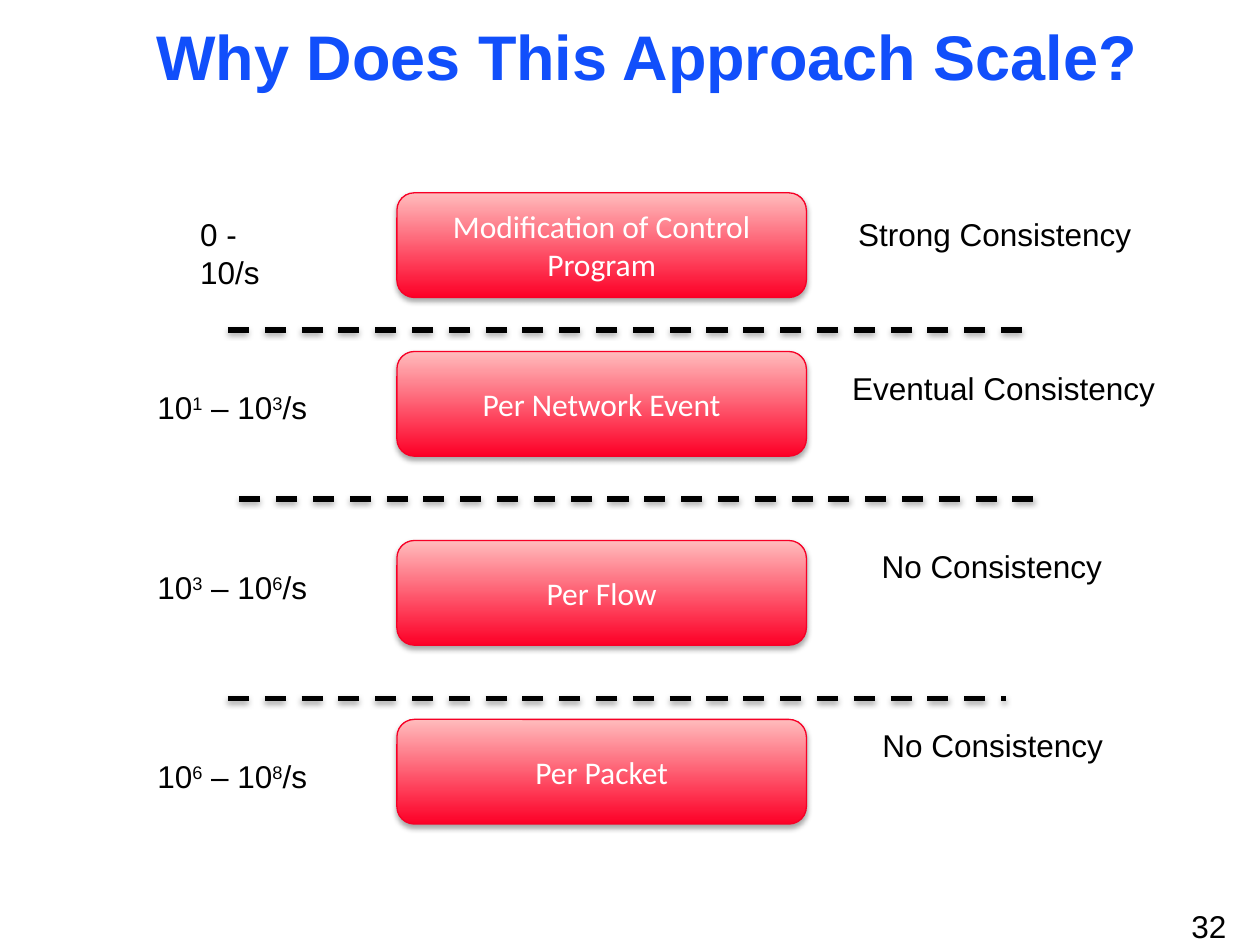
import dataclasses

import pptx
import pptx.dml.color
import pptx.enum.dml
import pptx.enum.shapes
import pptx.enum.text
import pptx.oxml
import pptx.oxml.ns
import pptx.util

Pt = pptx.util.Pt
RGB = pptx.dml.color.RGBColor.from_string
ALIGN = pptx.enum.text.PP_ALIGN
ANCHOR = pptx.enum.text.MSO_ANCHOR


@dataclasses.dataclass(frozen=True)
class Theme:
    """Colours, fonts and type sizes of the slide."""
    title: str = "114FFB"
    ink: str = "000000"
    light: str = "FFFFFF"
    red: str = "FD0027"
    pink: str = "FFBBBC"
    edge: str = "F70026"
    font: str = "Arial"
    box_font: str = "Calibri"
    title_size: float = 36
    body_size: float = 18


THEME = Theme()


def assign(obj, values):
    """Set each attribute named in values."""
    for name, value in values.items():
        setattr(obj, name, value)


def add_shadow(sp, alpha, dist):
    """Give a shape or connector a soft shadow falling straight down."""
    xml = (
        f'<a:effectLst {pptx.oxml.ns.nsdecls("a")}>'
        f'<a:outerShdw blurRad="{Pt(3.15)}" dist="{Pt(dist)}" dir="5400000" rotWithShape="0">'
        f'<a:srgbClr val="{THEME.ink}"><a:alpha val="{alpha * 1000}"/></a:srgbClr>'
        '</a:outerShdw></a:effectLst>'
    )
    for old in sp._element.spPr.findall(pptx.oxml.ns.qn("a:effectLst")):
        sp._element.spPr.remove(old)
    sp._element.spPr.append(pptx.oxml.parse_xml(xml))


def write(sp, text, align=ALIGN.LEFT, color=THEME.ink, frame=None, **font):
    """Write text in one paragraph, raising every second part split by ^."""
    tf = sp.text_frame
    assign(tf, {"word_wrap": True, "vertical_anchor": ANCHOR.TOP, **(frame or {})})
    p = tf.paragraphs[0]
    p.alignment = align
    for i, part in enumerate(text.split("^")):
        r = p.add_run()
        r.text = part
        assign(r.font, {"name": THEME.font, "size": Pt(THEME.body_size), **font})
        r.font.color.rgb = RGB(color)
        if i % 2:
            r._r.get_or_add_rPr().set("baseline", "30000")
    return p


def add_text(s, box, text, **style):
    """Place a text box and write in it."""
    return write(s.shapes.add_textbox(*map(Pt, box)), text, **style)


def add_title(s, box, text):
    """Place the slide title in the box."""
    p = add_text(s, box, text, align=ALIGN.CENTER, color=THEME.title,
                 frame={"vertical_anchor": ANCHOR.MIDDLE},
                 size=Pt(THEME.title_size), bold=True)
    p.line_spacing = 0.9


def add_event(s, box, text):
    """Place a red rounded event box."""
    sp = s.shapes.add_shape(pptx.enum.shapes.MSO_SHAPE.ROUNDED_RECTANGLE, *map(Pt, box))
    sp.fill.gradient()
    sp.fill.gradient_angle = 90
    for stop, position, color in zip(sp.fill.gradient_stops, (0, 1), (THEME.red, THEME.pink)):
        stop.position = position
        stop.color.rgb = RGB(color)
    sp.line.color.rgb = RGB(THEME.edge)
    sp.line.width = Pt(0.75)
    add_shadow(sp, 35, 1.8)
    write(sp, text, align=ALIGN.CENTER, color=THEME.light,
          frame={"vertical_anchor": ANCHOR.MIDDLE}, name=THEME.box_font)


def add_level(s, box, rate, event, consistency):
    """Place a row: rate, event box and consistency, each as text and offsets."""
    left, top, width, height = box
    rate_text, rate_x, rate_y, rate_width = rate
    label, center, label_y = consistency
    add_text(s, (left + rate_x, top + rate_y, rate_width, 29), rate_text)
    add_event(s, (left + 144, top, 234, height), event)
    label_width = 2 * (width - center)
    add_text(s, (left + center - label_width / 2, top + label_y, label_width, 29),
             label, align=ALIGN.CENTER, frame={"word_wrap": False})


def add_divider(s, left, right, y):
    """Draw a dashed line between two levels."""
    line = s.shapes.add_connector(pptx.enum.shapes.MSO_CONNECTOR.STRAIGHT,
                                  *map(Pt, (left, y, right, y)))
    line.line.color.rgb = RGB(THEME.ink)
    assign(line.line, {"width": Pt(3), "dash_style": pptx.enum.dml.MSO_LINE.DASH})
    add_shadow(line, 38, 1.57)


LEVELS = [
    (110.2, ("0 - 10/s", 24.5, 9.3, 70), "Modification of Control Program",
     ("Strong Consistency", 485.6, 9.3)),
    (200.9, ("10^1^ – 10^3^/s", 0, 17.3, 132.5), "Per Network Event",
     ("Eventual Consistency", 490.7, 6.5)),
    (308.9, ("10^3^ – 10^6^/s", 0, 12.2, 132.5), "Per Flow",
     ("No Consistency", 484, 0)),
    (411.1, ("10^6^ – 10^8^/s", 0, 18, 132.5), "Per Packet",
     ("No Consistency", 484.5, 0)),
]
DIVIDERS = [(130.3, 586.8, 188.6), (136.8, 592.6, 285.1), (130.3, 574.6, 399.2)]


def main():
    """Build the slide and save it."""
    prs = pptx.Presentation()
    assign(prs, {"slide_width": Pt(720), "slide_height": Pt(540)})
    s = prs.slides.add_slide(prs.slide_layouts[6])
    add_title(s, (19.4, 12.2, 700.6, 44.6), "Why Does This Approach Scale?")
    for top, rate, event, consistency in LEVELS:
        add_level(s, (82.8, top, 585, 59.8), rate, event, consistency)
    for divider in DIVIDERS:
        add_divider(s, *divider)
    add_text(s, (653.8, 514.8, 54, 29), "32", align=ALIGN.RIGHT)
    prs.save("out.pptx")


if __name__ == "__main__":
    main()
